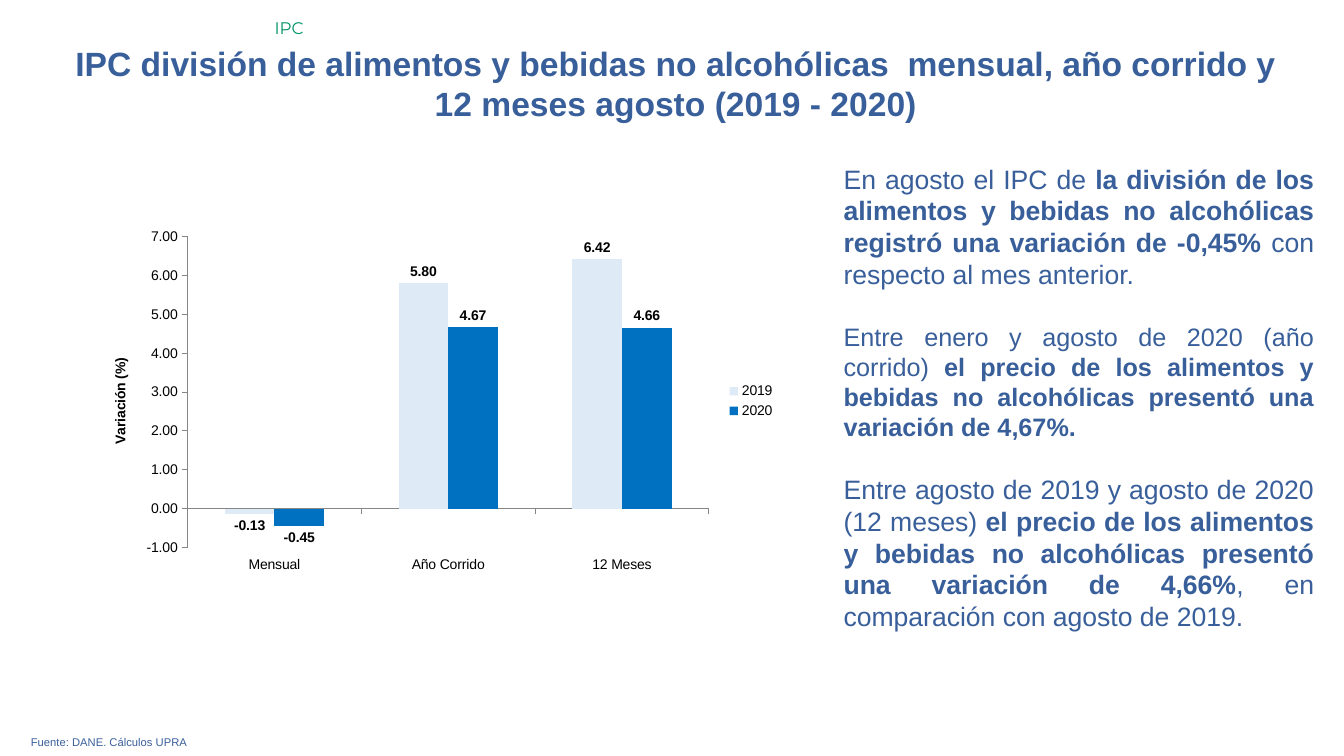
"""Build the slide on the food and drink price index of August 2019 and 2020."""
from dataclasses import dataclass

from lxml.etree import SubElement
from pptx import Presentation
from pptx.chart.data import CategoryChartData
from pptx.dml.color import RGBColor
from pptx.enum.chart import XL_CHART_TYPE as ChartType, XL_LABEL_POSITION as LabelPos
from pptx.enum.chart import XL_LEGEND_POSITION as LegendPos, XL_TICK_LABEL_POSITION as TickPos
from pptx.enum.chart import XL_TICK_MARK as Tick
from pptx.enum.text import MSO_ANCHOR as Anchor, MSO_AUTO_SIZE as AutoSize, PP_ALIGN as Align
from pptx.oxml.ns import qn
from pptx.util import Pt

PX = 9525
NUMBER = "#,##0.00"


@dataclass(frozen=True)
class Theme:
    font: str = "Arial"
    tag_font: str = "Montserrat"
    blue: str = "395F9B"
    green: str = "009267"
    black: str = "000000"
    axis: str = "868686"
    series: tuple = ("DEEBF7", "0070C0")
    title: int = 24
    body: int = 19
    body_small: int = 18
    tag: int = 12
    chart: int = 10
    source: int = 8
    gap: int = 22


def style(font, size, color, name, bold=False):
    font.size, font.name, font.bold = Pt(size), name, bold
    font.color.rgb = RGBColor.from_string(color)


def write(p, text, **fmt):
    r = p.add_run()
    r.text = text
    style(r.font, **fmt)


class Deck:
    def __init__(self, theme):
        self.t = theme
        self.prs = Presentation()
        self.prs.slide_width, self.prs.slide_height = 1280 * PX, 720 * PX
        self.s = self.prs.slides.add_slide(self.prs.slide_layouts[5])

    def frame(self, sp, box):
        sp.left, sp.top, sp.width, sp.height = (v * PX for v in box)
        tf = sp.text_frame
        tf.word_wrap, tf.auto_size = True, AutoSize.NONE
        tf.vertical_anchor = Anchor.TOP
        return tf

    def title(self, text, box):
        p = self.frame(self.s.shapes.title, box).paragraphs[0]
        p.alignment = Align.CENTER
        write(p, text, size=self.t.title, color=self.t.blue, name=self.t.font, bold=True)

    def text(self, paragraphs, box, color, name, align=Align.JUSTIFY):
        tf = self.frame(self.s.shapes.add_textbox(0, 0, 0, 0), box)
        for i, runs in enumerate(paragraphs):
            p = tf.add_paragraph() if i else tf.paragraphs[0]
            p.alignment = align
            if i:
                p.space_before = Pt(self.t.gap)
            for text, size, bold in runs:
                write(p, text, size=size, color=color, name=name, bold=bold)

    def columns(self, cats, series, value_title, box, plot):
        t = self.t
        data = CategoryChartData(number_format=NUMBER)
        data.categories = cats
        for name, values in series.items():
            data.add_series(name, values)
        chart = self.s.shapes.add_chart(
            ChartType.COLUMN_CLUSTERED, *(v * PX for v in box), data).chart
        style(chart.font, t.chart, t.black, t.font)
        chart.has_title = False
        chart.has_legend = True
        chart.legend.position = LegendPos.RIGHT
        chart.legend.include_in_layout = False

        bars = chart.plots[0]
        bars.gap_width, bars.overlap, bars.vary_by_categories = 150, 0, False
        for ser, color in zip(bars.series, t.series):
            ser.invert_if_negative = False
            ser.format.fill.solid()
            ser.format.fill.fore_color.rgb = RGBColor.from_string(color)
            labels = ser.data_labels
            labels.show_value, labels.position = True, LabelPos.OUTSIDE_END
            labels.number_format, labels.number_format_is_linked = NUMBER, False
            style(labels.font, t.chart, t.black, t.font, True)

        for axis in (chart.category_axis, chart.value_axis):
            axis.has_major_gridlines = False
            axis.major_tick_mark, axis.minor_tick_mark = Tick.OUTSIDE, Tick.NONE
            axis.format.line.color.rgb = RGBColor.from_string(t.axis)
            axis.format.line.width = Pt(0.75)
        chart.category_axis.tick_label_position = TickPos.LOW
        values = chart.value_axis
        values.minimum_scale, values.maximum_scale, values.major_unit = -1, 7, 1
        values.tick_labels.number_format = NUMBER
        values.tick_labels.number_format_is_linked = False
        tf = values.axis_title.text_frame
        tf._txBody.bodyPr.set("rot", "-5400000")
        write(tf.paragraphs[0], value_title, size=t.chart, color=t.black, name=t.font, bold=True)
        self.place_plot(chart, plot)

    def place_plot(self, chart, plot):
        area = chart._chartSpace.chart.plotArea
        for old in area.findall(qn("c:layout")):
            area.remove(old)
        layout = SubElement(area, qn("c:layout"))
        area.insert(0, layout)
        manual = SubElement(layout, qn("c:manualLayout"))
        parts = dict(layoutTarget="inner", xMode="edge", yMode="edge", **plot)
        for tag, value in parts.items():
            SubElement(manual, qn(f"c:{tag}")).set("val", str(value))


def main():
    t = Theme()
    deck = Deck(t)
    deck.title("IPC división de alimentos y bebidas no alcohólicas  mensual, año corrido y "
               "12 meses agosto (2019 - 2020)", (43, 36, 1201, 87))
    deck.text([[("Fuente: DANE. Cálculos UPRA", t.source, False)]],
              (20, 696, 1239, 23), t.blue, t.font)
    deck.text([
        [("En agosto el IPC de ", t.body, False),
         ("la división de los alimentos y bebidas no alcohólicas registró "
          "una variación de -0,45% ", t.body, True),
         ("con respecto al mes anterior.", t.body, False)],
        [("Entre enero y agosto de 2020 (año corrido) ", t.body_small, False),
         ("el precio de los alimentos y bebidas no alcohólicas presentó "
          "una variación de 4,67%.", t.body_small, True)],
        [("Entre agosto de 2019 y agosto de 2020 (12 meses) ", t.body, False),
         ("el precio de los alimentos y bebidas no alcohólicas presentó "
          "una variación de 4,66%", t.body, True),
         (", en comparación con agosto de 2019.", t.body, False)],
    ], (794, 150, 467, 494), t.blue, t.font)
    deck.text([[("IPC", t.tag, False)]], (252, 12, 1027, 29), t.green, t.tag_font, Align.LEFT)
    deck.columns(("Mensual", "Año Corrido", "12 Meses"),
                 {"2019": (-0.13, 5.80, 6.42), "2020": (-0.45, 4.67, 4.66)},
                 "Variación (%)", (86, 212, 662, 340),
                 dict(x=0.14, y=0.04, w=0.75, h=0.87))
    deck.prs.save("out.pptx")


if __name__ == "__main__":
    main()
